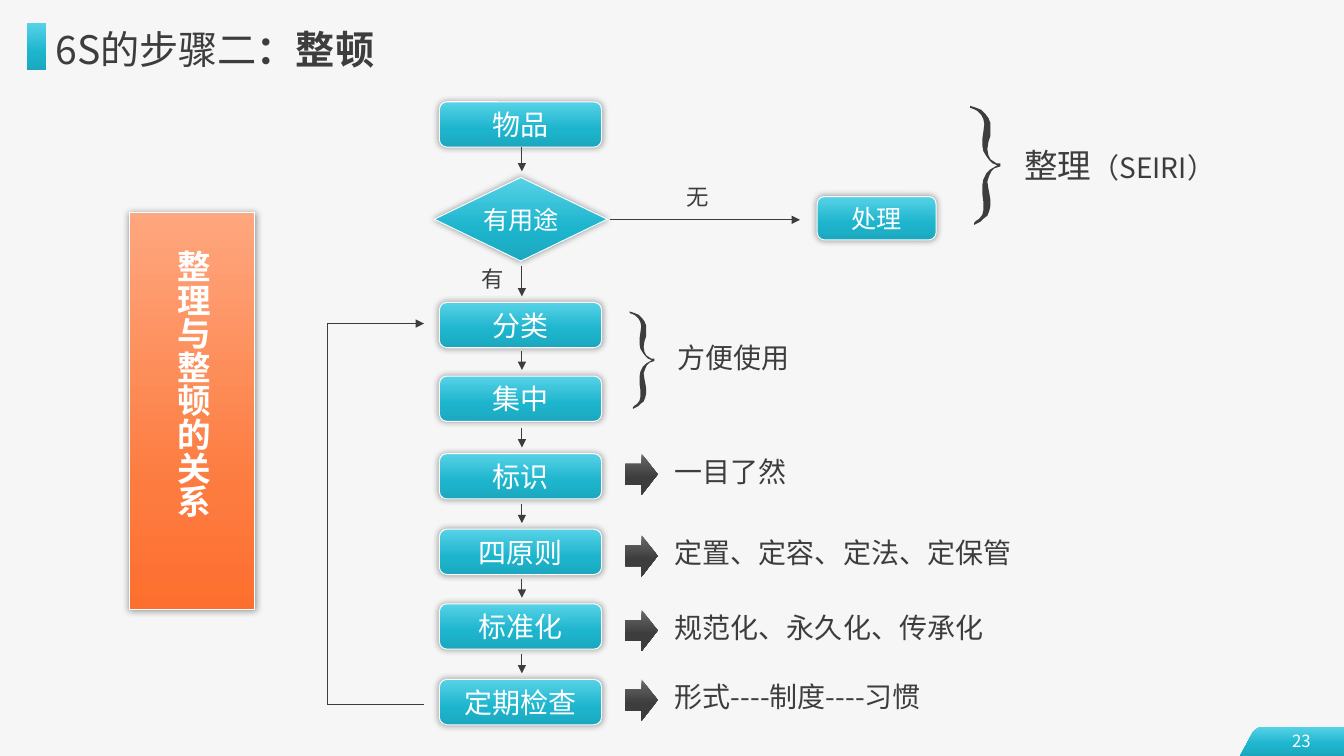
from dataclasses import dataclass
from itertools import pairwise

from lxml import etree
from pptx import Presentation
from pptx import util as u
from pptx.dml import color
from pptx.enum import shapes, text
from pptx.oxml import ns

Stops = tuple[tuple[int, str], ...]


@dataclass(frozen=True)
class Theme:
    font: str = "Noto Sans CJK SC"
    paper: str = "F6F6F6"
    ink: str = "3D3D3D"
    white: str = "FFFFFF"
    teal: Stops = ((0, "57D2E7"), (60, "1DB5CD"), (100, "1BA8BF"))
    grey: Stops = ((0, "696969"), (59, "3D3D3D"), (100, "3D3D3D"))
    orange: Stops = ((0, "FEA67E"), (70, "FD7B3F"), (100, "FD6F2F"))
    hairline: float = 0.75
    title: float = 28
    heading: float = 24
    body: float = 20
    branch: float = 18
    caption: float = 16
    page: float = 12


@dataclass(frozen=True)
class Box:
    left: float
    top: float
    width: float
    height: float

    def emu(self) -> tuple[int, ...]:
        return tuple(u.Pt(v) for v in (self.left, self.top, self.width, self.height))


@dataclass(frozen=True)
class Words:
    content: str
    size: float
    bold: bool = False


@dataclass(frozen=True)
class Label:
    box: Box
    words: tuple[Words, ...]
    ink: str
    align: text.PP_ALIGN = text.PP_ALIGN.LEFT
    inset: bool = True
    vertical: bool = False


@dataclass(frozen=True)
class Panel:
    kind: shapes.MSO_SHAPE
    box: Box
    stops: Stops
    words: tuple[Words, ...] = ()
    raised: bool = True


@dataclass(frozen=True)
class Link:
    x1: float
    y1: float
    x2: float
    y2: float
    arrow: bool = True


THEME = Theme()
SHAPE = shapes.MSO_SHAPE

STEP_LEFT, STEP_WIDTH, STEP_HEIGHT = 314, 116, 32.4
FLOW_X = 373
STEPS = {"分类": 216, "集中": 268.6, "标识": 324, "四原则": 378, "标准化": 431.3, "定期检查": 485.3}
NOTES = {"一目了然": 324, "定置、定容、定法、定保管": 382.3, "规范化、永久化、传承化": 435.6, "形式----制度----习惯": 485.3}
LOOP_X, LOOP_END, LOOP_TOP, LOOP_BOTTOM = 234, 303, 231.1, 503.3

BRACE = (
    (0, 2), (0, 0), (6, 2), (11, 4), (15, 8), (18, 12), (20, 17), (20, 23), (20, 30), (18, 36),
    (17, 43), (18, 49), (20, 53), (23, 55), (26, 57), (30, 57), (30, 60), (24, 62), (21, 65),
    (19, 69), (17, 75), (18, 82), (19, 87), (20, 93), (20, 99), (19, 104), (17, 109), (13, 112),
    (10, 115), (6, 117), (4, 118), (4, 116), (6, 114), (9, 112), (12, 108), (13, 104), (13, 95),
    (12, 87), (12, 79), (13, 73), (16, 67), (20, 63), (27, 59), (22, 57), (19, 54), (16, 50),
    (13, 45), (12, 39), (12, 33), (13, 26), (14, 18), (13, 13), (11, 9), (7, 5), (3, 3),
)
PAGE_TAB = ((74.2, 0), (16, 0), (13.5, 0.5), (11, 1.7), (8.7, 3.6), (0, 21), (74.2, 21))


def rgb(value: str) -> color.RGBColor:
    return color.RGBColor.from_string(value)


def child(parent, tag: str, **attributes):
    return etree.SubElement(parent, ns.qn(tag), attributes)


def fill_gradient(shape, stops: Stops) -> None:
    shape.fill.gradient()
    shape.fill.gradient_angle = 270
    ramp = shape.element.spPr.find(".//" + ns.qn("a:gsLst"))
    for stop in list(ramp):
        ramp.remove(stop)
    for percent, value in stops:
        child(child(ramp, "a:gs", pos=str(percent * 1000)), "a:srgbClr", val=value)


def write(frame, words: tuple[Words, ...], ink: str, align: text.PP_ALIGN, inset: bool) -> None:
    frame.word_wrap = True
    frame.vertical_anchor = text.MSO_ANCHOR.MIDDLE
    if not inset:
        frame.margin_left = frame.margin_right = frame.margin_top = frame.margin_bottom = 0
    line = frame.paragraphs[0]
    line.alignment = align
    for part in words:
        run = line.add_run()
        run.text = part.content
        run.font.size = u.Pt(part.size)
        run.font.bold = part.bold
        run.font.name = THEME.font
        run.font.color.rgb = rgb(ink)
        child(run.font._element, "a:ea", typeface=THEME.font)


def draw_label(slide, label: Label) -> None:
    frame = slide.shapes.add_textbox(*label.box.emu()).text_frame
    write(frame, label.words, label.ink, label.align, label.inset)
    if label.vertical:
        frame._txBody.bodyPr.set("vert", "eaVert")


def draw_panel(slide, panel: Panel) -> None:
    shape = slide.shapes.add_shape(panel.kind, *panel.box.emu())
    fill_gradient(shape, panel.stops)
    shape.shadow.inherit = False
    if panel.raised:
        shape.line.color.rgb = rgb(THEME.white)
        shape.line.width = u.Pt(THEME.hairline)
        effects = shape.element.spPr.find(ns.qn("a:effectLst"))
        glow = child(effects, "a:outerShdw", blurRad=str(u.Pt(5)), dist="0", dir="0", algn="ctr", rotWithShape="0")
        child(child(glow, "a:srgbClr", val="000000"), "a:alpha", val="40000")
    else:
        shape.line.fill.background()
    if panel.words:
        write(shape.text_frame, panel.words, THEME.white, text.PP_ALIGN.CENTER, False)


def draw_link(slide, link: Link) -> None:
    ends = (u.Pt(v) for v in (link.x1, link.y1, link.x2, link.y2))
    connector = slide.shapes.add_connector(shapes.MSO_CONNECTOR.STRAIGHT, *ends)
    connector.line.color.rgb = rgb(THEME.ink)
    connector.line.width = u.Pt(THEME.hairline)
    if link.arrow:
        child(connector.line._get_or_add_ln(), "a:tailEnd", type="triangle")
    child(connector._element.spPr, "a:effectLst")


def draw_outline(slide, points: tuple, left: float, top: float, unit: float):
    builder = slide.shapes.build_freeform(*points[0], scale=u.Pt(unit))
    builder.add_line_segments(points[1:], close=True)
    shape = builder.convert_to_shape(u.Pt(left), u.Pt(top))
    shape.shadow.inherit = False
    shape.line.fill.background()
    return shape


def step(content: str, top: float) -> Panel:
    box = Box(STEP_LEFT, top, STEP_WIDTH, STEP_HEIGHT)
    return Panel(SHAPE.ROUNDED_RECTANGLE, box, THEME.teal, (Words(content, THEME.body),))


def note(content: str, left: float, top: float, width: float, size: float) -> Label:
    return Label(Box(left, top, width, size * 1.6), (Words(content, size),), THEME.ink)


def main() -> None:
    deck = Presentation()
    deck.slide_width, deck.slide_height = u.Pt(960.5), u.Pt(540)
    slide = deck.slides.add_slide(deck.slide_layouts[6])
    slide.background.fill.solid()
    slide.background.fill.fore_color.rgb = rgb(THEME.paper)

    fill_gradient(draw_outline(slide, PAGE_TAB, 886.3, 519, 1), THEME.teal)
    for left, top, unit in ((450, 222.5, 0.59), (693.4, 75.6, 0.72)):
        brace = draw_outline(slide, BRACE, left, top, unit)
        brace.fill.solid()
        brace.fill.fore_color.rgb = rgb(THEME.ink)

    panels = [
        Panel(SHAPE.RECTANGLE, Box(19.4, 16.6, 13.7, 33.8), THEME.teal, raised=False),
        Panel(SHAPE.RECTANGLE, Box(92.2, 152, 90, 283.7), THEME.orange),
        step("物品", 72.7),
        Panel(SHAPE.FLOWCHART_DECISION, Box(310.3, 126.7, 123.8, 59.8), THEME.teal, (Words("有用途", THEME.branch),)),
        Panel(SHAPE.ROUNDED_RECTANGLE, Box(584, 140.4, 85, 31), THEME.teal, (Words("处理", THEME.branch),)),
        *(step(content, top) for content, top in STEPS.items()),
        *(Panel(SHAPE.RIGHT_ARROW, Box(447, top, 23, 29.5), THEME.grey, raised=False) for top in NOTES.values()),
    ]
    for panel in panels:
        draw_panel(slide, panel)

    loop = ((LOOP_END, LOOP_BOTTOM), (LOOP_X, LOOP_BOTTOM), (LOOP_X, LOOP_TOP), (LOOP_END, LOOP_TOP))
    links = [
        Link(FLOW_X, 105, FLOW_X, 122.4),
        Link(FLOW_X, 190, FLOW_X, 211.7),
        Link(435.6, 157, 571.7, 157),
        *(Link(FLOW_X, top - 18, FLOW_X, top - 4.3) for top in list(STEPS.values())[1:]),
        *(Link(*start, *end, arrow=end == loop[-1]) for start, end in pairwise(loop)),
    ]
    for link in links:
        draw_link(slide, link)

    title = (Words("6S的步骤二", THEME.title), Words("：整顿", THEME.title, True))
    seiri = (Words("整理", THEME.heading), Words("（SEIRI）", THEME.body))
    relation = (Words("整理与整顿的关系", THEME.heading, True),)
    labels = [
        Label(Box(39.6, 18, 498, 33.8), title, THEME.ink, inset=False),
        Label(Box(123.8, 178.6, 28.8, 230.4), relation, THEME.white, inset=False, vertical=True),
        Label(Box(725, 100, 191.5, 36), seiri, THEME.ink),
        Label(Box(915, 518.4, 30.2, 21.6), (Words("23", THEME.page),), THEME.white, text.PP_ALIGN.CENTER),
        note("无", 483.8, 127.4, 31, THEME.caption),
        note("有", 337, 186.5, 31, THEME.caption),
        note("方便使用", 477.4, 239, 130, THEME.body),
        *(note(content, 475.2, top - 3.6, 300, THEME.body) for content, top in NOTES.items()),
    ]
    for label in labels:
        draw_label(slide, label)

    deck.save("out.pptx")


if __name__ == "__main__":
    main()
